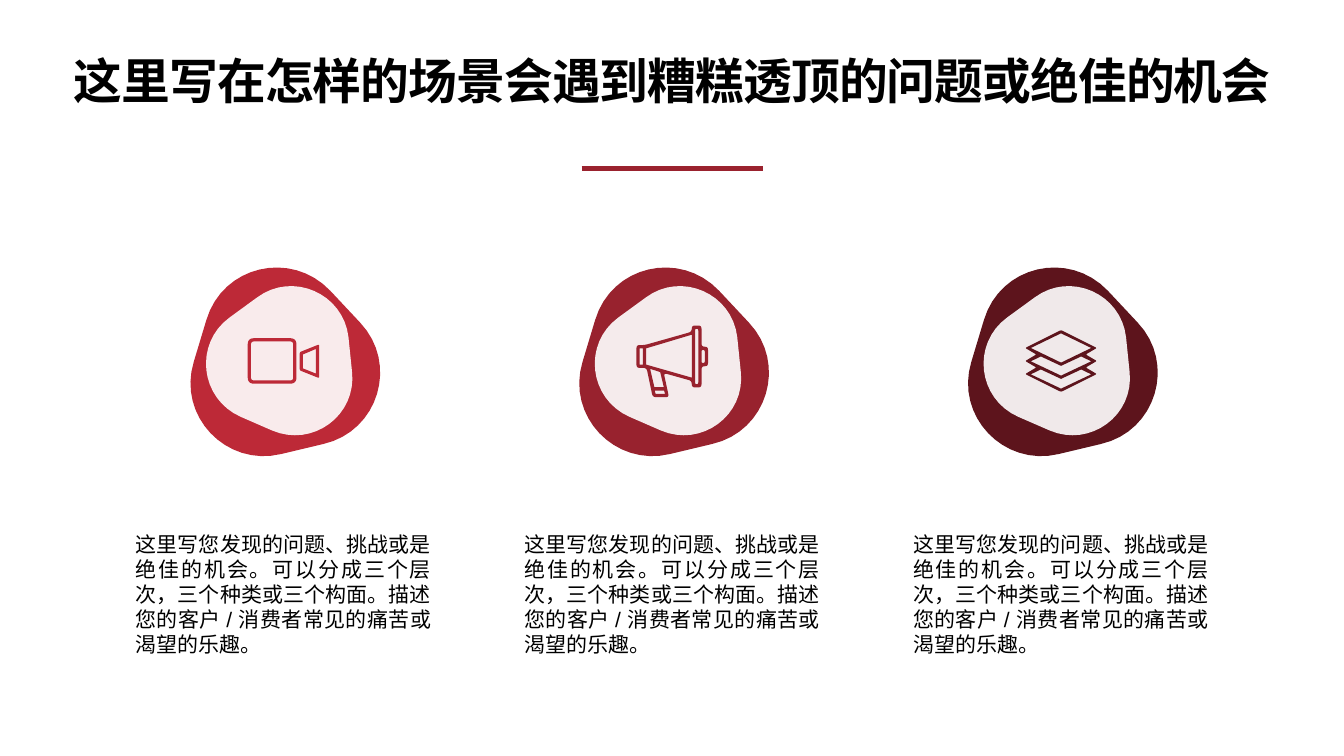
from dataclasses import dataclass
from math import dist

from lxml.etree import SubElement
from pptx import Presentation
from pptx.dml.color import RGBColor
from pptx.enum.shapes import MSO_CONNECTOR
from pptx.enum.text import MSO_ANCHOR, MSO_AUTO_SIZE, PP_ALIGN
from pptx.oxml.ns import qn
from pptx.util import Inches, Pt

Point = tuple[float, float]
WIDTH, HEIGHT = 26.67, 15
CENTRE = 13.34
COLUMN_PITCH = 7.715
BADGE_Y = 7.15
ICON_UNIT = 1.42 / 22
CURVE_STEPS = 16
COLORS = {
    "text": "000000", "rule": "9A222E", "veil": "FFFFFF",
    "red": "BD2937", "crimson": "98222E", "maroon": "5D141C",
}
HEADING = "这里写在怎样的场景会遇到糟糕透顶的问题或绝佳的机会"
DESCRIPTION = (
    "这里写您发现的问题、挑战或是绝佳的机会。可以分成三个层次，三个种类或三个构面。"
    "描述您的客户 / 消费者常见的痛苦或渴望的乐趣。"
)
OUTER_BLOB = [
    [(1.52, -0.75), (2.29, 0.06), (1.89, 1.41), (0.79, 1.66)],
    [(-0.05, 1.86), (-1.14, 2.12), (-2.11, 1.1), (-1.78, 0.03)],
    [(-1.53, -0.8), (-1.21, -1.88), (0.15, -2.2), (0.93, -1.38)],
]
INNER_BLOB = [
    [(-0.52, -1.25), (0.18, -1.77), (1.19, -1.33), (1.29, -0.46)],
    [(1.36, 0.22), (1.46, 1.09), (0.58, 1.74), (-0.23, 1.39)],
    [(-0.85, 1.12), (-1.66, 0.76), (-1.78, -0.33), (-1.07, -0.85)],
]


@dataclass
class Contour:
    corners: list[Point]
    radius: float = 0


@dataclass
class Icon:
    left: float
    top: float
    contours: list[Contour]


@dataclass
class Topic:
    color: str
    icon: Icon


def box(left: float, top: float, right: float, bottom: float, radius: float = 0) -> Contour:
    return Contour([(left, top), (right, top), (right, bottom), (left, bottom)], radius)


def chevron(top: float) -> Contour:
    return Contour([(1.7, top + 1.5), (4.8, top), (11, top + 2.9),
                    (17.2, top), (20.3, top + 1.5), (11, top + 5.9)])


CAMERA = Icon(-0.71, -0.44, [
    box(0, 0, 15, 14, 2), box(1, 1, 14, 13, 1),
    Contour([(16, 4.3), (22, 1.9), (22, 12.3), (16, 9.9)], 0.5),
    Contour([(17, 5), (21, 3.3), (21, 10.9), (17, 9.3)]),
])
MEGAPHONE = Icon(-0.71, -0.69, [
    Contour([(20, 6.5), (20, 0), (17, 0), (17, 1.9), (2.5, 6), (0, 6), (0, 13),
             (3.1, 13), (5, 22), (10, 22), (8.4, 14.6), (17, 17), (17, 19),
             (20, 19), (20, 12.5), (22, 12.5), (22, 6.5)], 1),
    box(20, 7.5, 21, 11.5, 0.5), box(18, 1, 19, 18, 0.5), box(1, 7, 2, 12),
    Contour([(3, 7), (17, 2.8), (17, 16), (3, 12)]),
    Contour([(4.2, 13.3), (7.3, 14.3), (8.4, 18.9), (5.5, 18.9)]),
    Contour([(5.6, 20), (8.5, 20), (8.8, 21), (5.9, 21)]),
])
LAYERS = Icon(-0.71, -0.6, [
    Contour([(11, 0), (22, 5.5), (18.6, 7.5), (22, 9.5), (18.6, 11.5), (22, 13.5),
             (11, 19), (0, 13.5), (3.4, 11.5), (0, 9.5), (3.4, 7.5), (0, 5.5)], 0.5),
    Contour([(1.7, 5.5), (11, 1), (20.3, 5.5), (11, 10)]),
    chevron(8.1), chevron(12.1),
])
TOPICS = [Topic("red", CAMERA), Topic("crimson", MEGAPHONE), Topic("maroon", LAYERS)]


def blend(start: Point, end: Point, share: float) -> Point:
    return (start[0] + (end[0] - start[0]) * share, start[1] + (end[1] - start[1]) * share)


def curve_point(controls: list[Point], share: float) -> Point:
    while len(controls) > 1:
        controls = [blend(a, b, share) for a, b in zip(controls, controls[1:])]
    return controls[0]


def sample(controls: list[Point], steps: int = CURVE_STEPS) -> list[Point]:
    return [curve_point(controls, step / steps) for step in range(steps + 1)]


def rounded(contour: Contour) -> list[Point]:
    corners, radius = contour.corners, contour.radius
    if not radius:
        return corners
    outline = []
    for index, corner in enumerate(corners):
        before, after = corners[index - 1], corners[(index + 1) % len(corners)]
        ends = [blend(corner, other, min(0.5, radius / dist(corner, other)))
                for other in (before, after)]
        outline += sample([ends[0], corner, ends[1]], 6)
    return outline


def draw_outlines(shapes, outlines: list[list[Point]], color: str, x: float, y: float):
    builder = None
    for outline in outlines:
        points = [(Inches(x + px), Inches(y + py)) for px, py in outline]
        if builder is None:
            builder = shapes.build_freeform(*points[0])
        else:
            builder.move_to(*points[0])
        builder.add_line_segments(points[1:], close=True)
    drawn = builder.convert_to_shape()
    drawn.shadow.inherit = False
    drawn.fill.solid()
    drawn.fill.fore_color.rgb = RGBColor.from_string(COLORS[color])
    drawn.line.fill.background()
    return drawn


def draw_badge(slide, topic: Topic, x: float) -> None:
    badge = slide.shapes.add_group_shape().shapes
    outer, inner = ([[point for curve in blob for point in sample(curve)]]
                    for blob in (OUTER_BLOB, INNER_BLOB))
    draw_outlines(badge, outer, topic.color, x, BADGE_Y)
    veil = draw_outlines(badge, inner, "veil", x, BADGE_Y)
    veil_color = next(veil.fill._xPr.iter(qn("a:srgbClr")))
    SubElement(veil_color, qn("a:alpha"), val="91000")
    icon = topic.icon
    outlines = [[(px * ICON_UNIT, py * ICON_UNIT) for px, py in rounded(contour)]
                for contour in icon.contours]
    draw_outlines(badge, outlines, topic.color, x + icon.left, BADGE_Y + icon.top)


def write(frame, words: str, size: float, align: PP_ALIGN, anchor: MSO_ANCHOR):
    frame.text = words
    frame.word_wrap = True
    frame.vertical_anchor = anchor
    frame.margin_left = frame.margin_right = Inches(0.06)
    frame.margin_top = frame.margin_bottom = Inches(0.06)
    paragraph = frame.paragraphs[0]
    paragraph.alignment = align
    paragraph._p.get_or_add_pPr().set("hangingPunct", "0")
    font = paragraph.runs[0].font
    font.name, font.size = "Arial", Pt(size)
    font.color.rgb = RGBColor.from_string(COLORS["text"])
    return paragraph


def draw_heading(slide) -> None:
    heading = slide.shapes.title
    heading.left, heading.top = Inches(1.32), Inches(1.18)
    heading.width, heading.height = Inches(24.03), Inches(1.57)
    paragraph = write(heading.text_frame, HEADING, 69.7, PP_ALIGN.CENTER, MSO_ANCHOR.TOP)
    heading.text_frame.auto_size = MSO_AUTO_SIZE.NONE
    paragraph.line_spacing = 0.8
    run = paragraph.runs[0]
    run.font.bold = True
    run.font._element.set("spc", "-140")


def draw_rule(slide) -> None:
    half = 1.8
    y = Inches(3.34)
    rule = slide.shapes.add_connector(
        MSO_CONNECTOR.STRAIGHT, Inches(CENTRE - half), y, Inches(CENTRE + half), y)
    rule.line.color.rgb = RGBColor.from_string(COLORS["rule"])
    rule.line.width = Pt(7)
    SubElement(rule._element.spPr, qn("a:effectLst"))


def draw_description(slide, x: float) -> None:
    width = 5.99
    description = slide.shapes.add_textbox(
        Inches(x - width / 2), Inches(10.47), Inches(width), Inches(2.64))
    write(description.text_frame, DESCRIPTION, 30, PP_ALIGN.JUSTIFY, MSO_ANCHOR.MIDDLE)
    description.text_frame.auto_size = MSO_AUTO_SIZE.SHAPE_TO_FIT_TEXT


def main() -> None:
    deck = Presentation()
    deck.slide_width, deck.slide_height = Inches(WIDTH), Inches(HEIGHT)
    slide = deck.slides.add_slide(deck.slide_layouts.get_by_name("Title Only"))
    draw_heading(slide)
    draw_rule(slide)
    for column, topic in enumerate(TOPICS):
        x = CENTRE + (column - 1) * COLUMN_PITCH
        draw_description(slide, x)
        draw_badge(slide, topic, x)
    deck.save("out.pptx")


if __name__ == "__main__":
    main()
